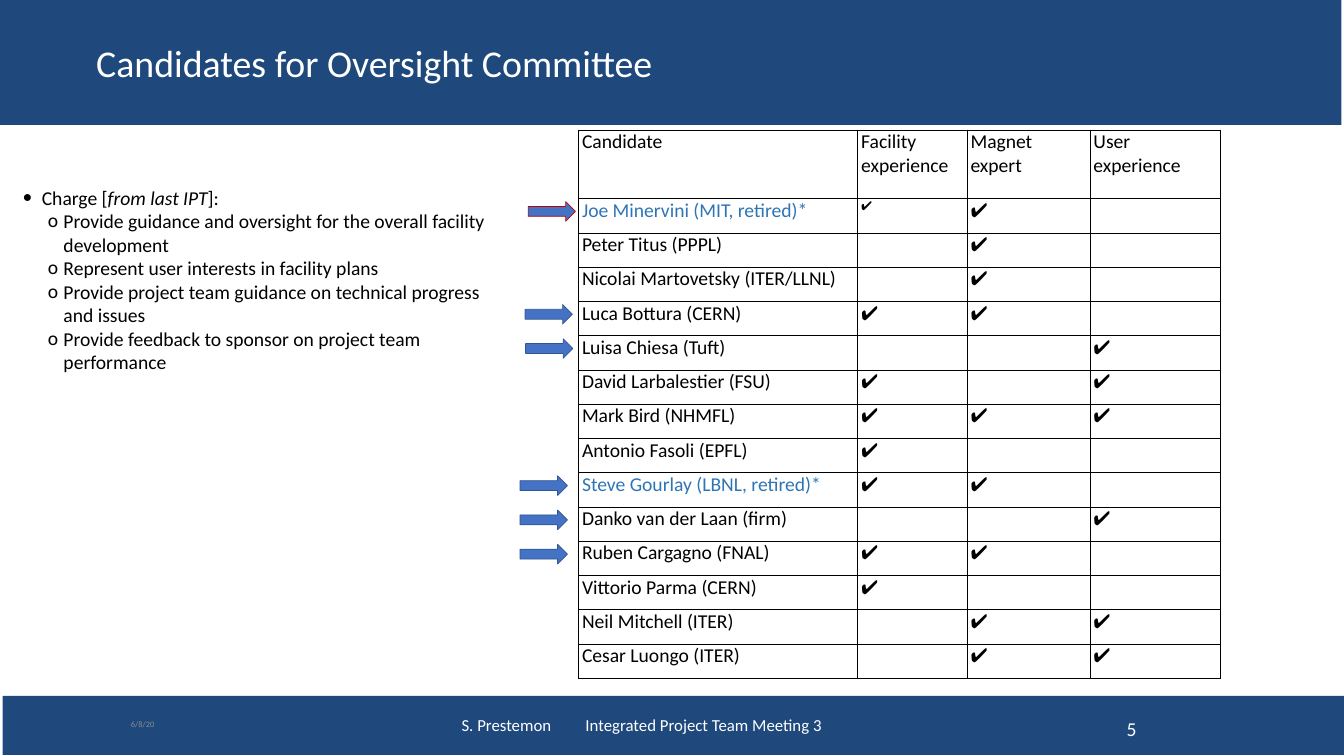
"""Build the oversight committee candidates slide."""
from lxml.etree import SubElement
from pptx import Presentation
from pptx.dml.color import RGBColor
from pptx.enum.shapes import MSO_SHAPE as Shape
from pptx.enum.text import MSO_ANCHOR as Anchor, MSO_AUTO_SIZE as AutoSize, PP_ALIGN as Align
from pptx.oxml.ns import qn
from pptx.util import Inches, Pt

COLORS = {
    "band": "1F497D", "white": "FFFFFF", "black": "000000", "date": "8C8C8C",
    "retired": "2E75B6", "arrow": "4472C4", "outline": "325491", "alert": "C00000",
}
FONT = "Calibri"
TITLE = "Candidates for Oversight Committee"
CHARGE = [("Charge [", False), ("from last IPT", True), ("]:", False)]
DUTIES = [
    "Provide guidance and oversight for the overall facility development",
    "Represent user interests in facility plans",
    "Provide project team guidance on technical progress and issues",
    "Provide feedback to sponsor on project team performance",
]
HEADERS = ["Candidate", "Facility experience", "Magnet expert", "User experience"]
CHECK = "✔︎"
CANDIDATES = [
    ("Joe Minervini (MIT, retired)*", "FM"),
    ("Peter Titus (PPPL)", "M"),
    ("Nicolai Martovetsky (ITER/LLNL)", "M"),
    ("Luca Bottura (CERN)", "FM"),
    ("Luisa Chiesa (Tuft)", "U"),
    ("David Larbalestier (FSU)", "FU"),
    ("Mark Bird (NHMFL)", "FMU"),
    ("Antonio Fasoli (EPFL)", "F"),
    ("Steve Gourlay (LBNL, retired)*", "FM"),
    ("Danko van der Laan (firm)", "U"),
    ("Ruben Cargagno (FNAL)", "FM"),
    ("Vittorio Parma (CERN)", "F"),
    ("Neil Mitchell (ITER)", "MU"),
    ("Cesar Luongo (ITER)", "MU"),
]
ARROWS = [
    (0, 10.48, "alert"), (3, 10.42, "outline"), (4, 10.43, "outline"),
    (8, 10.32, "outline"), (9, 10.32, "outline"), (10, 10.32, "outline"),
]
BANDS = [(0.05, 13.81, 26.62, 1.17), (0, -0.01, 26.62, 2.49)]
FOOTERS = [
    ("6/8/20", (2.5, 13.9, 2.14, 0.92), 12, "date", Align.LEFT),
    ("S. Prestemon\tIntegrated Project Team Meeting 3",
     (9.06, 13.99, 11.18, 0.8), 24, "white", Align.LEFT),
    ("5", (21.36, 13.9, 1.29, 1.1), 28, "white", Align.RIGHT),
]
FOOTER_TAB = 2.46
TABLE_LEFT, TABLE_TOP = 11.48, 2.58
COLUMN_WIDTHS = [5.54, 2.17, 2.44, 2.58]
HEADER_HEIGHT, ROW_HEIGHT = 1.36, 0.68


def rgb(name):
    return RGBColor.from_string(COLORS[name])


def place(shape, box):
    shape.left, shape.top, shape.width, shape.height = map(Inches, box)


def style(paragraph, size, color):
    for run in paragraph.runs:
        run.font.name, run.font.size = FONT, Pt(size)
        run.font.color.rgb = rgb(color)


def add_solid(slide, kind, box, fill, line=None):
    shape = slide.shapes.add_shape(kind, *map(Inches, box))
    shape.shadow.inherit = False
    shape.fill.solid()
    shape.fill.fore_color.rgb = rgb(fill)
    if line:
        shape.line.color.rgb, shape.line.width = rgb(line), Pt(1)
    else:
        shape.line.fill.background()
    return shape


def add_bullet(paragraph, character, margin, hanging):
    properties = paragraph._p.get_or_add_pPr()
    properties.set("marL", str(Inches(margin)))
    properties.set("indent", str(-Inches(hanging)))
    SubElement(properties, qn("a:buFont"), typeface=FONT)
    SubElement(properties, qn("a:buChar"), char=character)


def fill_title(shape):
    place(shape, (1.81, 0.1, 23, 2.38))
    frame = shape.text_frame
    frame.text = TITLE
    frame.auto_size, frame.vertical_anchor = AutoSize.NONE, Anchor.MIDDLE
    paragraph = frame.paragraphs[0]
    paragraph.alignment, paragraph.line_spacing = Align.LEFT, 0.9
    style(paragraph, 54, "white")


def fill_charge(shape):
    place(shape, (0.35, 3.63, 9.76, 3.87))
    frame = shape.text_frame
    frame.auto_size = AutoSize.SHAPE_TO_FIT_TEXT
    frame.vertical_anchor = Anchor.TOP
    for text, italic in CHARGE:
        run = frame.paragraphs[0].add_run()
        run.text, run.font.italic = text, italic
    for duty in DUTIES:
        paragraph = frame.add_paragraph()
        paragraph.text, paragraph.level = duty, 1
    for paragraph in frame.paragraphs:
        paragraph.space_before = Pt(0)
        add_bullet(paragraph, *(("o", 0.81, 0.31) if paragraph.level else ("•", 0.38, 0.38)))
        style(paragraph, 28, "black")


def add_footer(slide, text, box, size, color, alignment):
    frame = slide.shapes.add_textbox(*map(Inches, box)).text_frame
    frame.text, frame.word_wrap, frame.vertical_anchor = text, True, Anchor.MIDDLE
    paragraph = frame.paragraphs[0]
    paragraph.alignment = alignment
    if "\t" in text:
        tabs = SubElement(paragraph._p.get_or_add_pPr(), qn("a:tabLst"))
        SubElement(tabs, qn("a:tab"), pos=str(Inches(FOOTER_TAB)), algn="l")
    style(paragraph, size, color)


def format_cell(cell, text, size, color):
    cell.text = text
    cell.margin_left = cell.margin_right = Inches(0.07)
    cell.margin_top = cell.margin_bottom = 0
    style(cell.text_frame.paragraphs[0], size, color)
    properties = cell._tc.get_or_add_tcPr()
    for side in ("a:lnL", "a:lnR", "a:lnT", "a:lnB"):
        line = SubElement(properties, qn(side), w=str(Pt(1)))
        SubElement(SubElement(line, qn("a:solidFill")), qn("a:srgbClr"), val=COLORS["black"])
    cell.fill.background()


def add_candidates(slide):
    rows = [HEADERS] + [
        [name] + [CHECK if key in skills else "" for key in "FMU"] for name, skills in CANDIDATES
    ]
    heights = [HEADER_HEIGHT] + [ROW_HEIGHT] * len(CANDIDATES)
    box = (TABLE_LEFT, TABLE_TOP, sum(COLUMN_WIDTHS), sum(heights))
    table = slide.shapes.add_table(len(rows), len(HEADERS), *map(Inches, box)).table
    table.first_row = table.horz_banding = False
    for column, width in zip(table.columns, COLUMN_WIDTHS):
        column.width = Inches(width)
    for row, height in zip(table.rows, heights):
        row.height = Inches(height)
    for i, values in enumerate(rows):
        for j, text in enumerate(values):
            size = 18 if (i, j) == (1, 1) else 28
            color = "retired" if "retired" in text else "black"
            format_cell(table.cell(i, j), text, size, color)


def main():
    presentation = Presentation()
    presentation.slide_width, presentation.slide_height = Inches(26.67), Inches(15)
    slide = presentation.slides.add_slide(presentation.slide_layouts[1])
    title, body = slide.placeholders
    for position, box in enumerate(BANDS, start=2):
        band = add_solid(slide, Shape.RECTANGLE, box, "band")
        slide.shapes._spTree.insert(position, band._element)
    fill_title(title)
    fill_charge(body)
    for footer in FOOTERS:
        add_footer(slide, *footer)
    add_candidates(slide)
    for row, left, line in ARROWS:
        top = TABLE_TOP + HEADER_HEIGHT + row * ROW_HEIGHT + 0.06
        add_solid(slide, Shape.RIGHT_ARROW, (left, top, 0.94, 0.39), "arrow", line)
    presentation.save("out.pptx")


if __name__ == "__main__":
    main()
